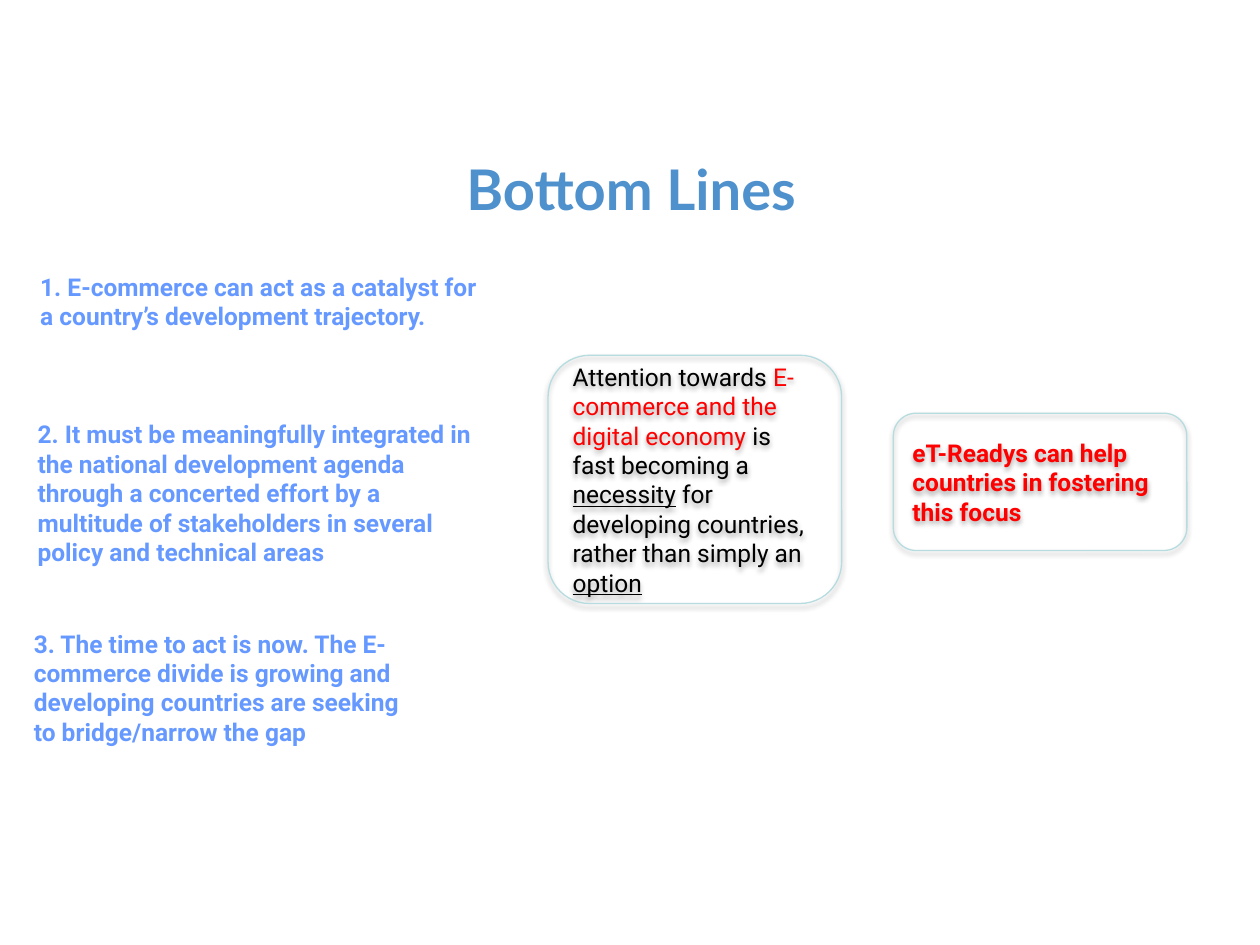
from dataclasses import dataclass

from lxml.etree import SubElement
from pptx import Presentation
from pptx.dml.color import RGBColor
from pptx.enum.shapes import MSO_SHAPE as Shape
from pptx.enum.text import MSO_ANCHOR as Anchor, MSO_AUTO_SIZE as AutoSize, PP_ALIGN as Align
from pptx.oxml.ns import qn
from pptx.util import Inches, Pt


@dataclass(frozen=True)
class Theme:
    title_font: str = "Lato"
    body_font: str = "Roboto"
    title_size: int = 32
    body_size: int = 14
    title: str = "4F91CD"
    point: str = "6699FF"
    text: str = "000000"
    accent: str = "FF0000"
    border: str = "B6DCDF"
    shadow: str = "000000"


@dataclass(frozen=True)
class Area:
    left: float
    top: float
    width: float
    height: float

    def lengths(self) -> tuple[int, int, int, int]:
        w, h = prs.slide_width / 100, prs.slide_height / 100
        return int(self.left * w), int(self.top * h), int(self.width * w), int(self.height * h)


@dataclass(frozen=True)
class Run:
    text: str
    color: str
    bold: bool = False
    underline: bool = False


@dataclass(frozen=True)
class Point:
    area: Area
    text: str


@dataclass(frozen=True)
class Card:
    area: Area
    runs: tuple[Run, ...]


T = Theme()
POINTS = (
    Point(Area(2.2, 28.13, 37.1, 10.8),
          "1. E-commerce can act as a catalyst for a country’s development trajectory."),
    Point(Area(2, 43.73, 36.6, 17.07),
          "2. It must be meaningfully integrated in the national development agenda through "
          "a concerted effort by a multitude of stakeholders in several policy and technical areas"),
    Point(Area(1.7, 65.87, 31.2, 17.07),
          "3. The time to act is now. The E-commerce divide is growing and developing "
          "countries are seeking to bridge/narrow the gap"),
)
CARDS = (
    Card(Area(43.5, 37.6, 23.3, 26.27), (
        Run("Attention towards ", T.text),
        Run("E-commerce and the digital economy ", T.accent),
        Run("is fast becoming a ", T.text),
        Run("necessity", T.text, underline=True),
        Run(" for developing countries, rather than simply an ", T.text),
        Run("option", T.text, underline=True),
    )),
    Card(Area(70.9, 43.73, 23.3, 14.53), (
        Run("eT-Readys can help countries in fostering this focus", T.accent, bold=True),
    )),
)


def add_runs(p, runs: tuple[Run, ...], font: str = T.body_font, size: int = T.body_size) -> None:
    for run in runs:
        r = p.add_run()
        r.text = run.text
        r.font.name, r.font.size = font, Pt(size)
        r.font.bold, r.font.underline = run.bold, run.underline
        r.font.color.rgb = RGBColor.from_string(run.color)


def add_title(s, area: Area, text: str) -> None:
    sp = s.shapes.title
    sp.left, sp.top, sp.width, sp.height = area.lengths()
    tf = sp.text_frame
    tf.vertical_anchor = Anchor.MIDDLE
    tf.margin_left = tf.margin_right = Inches(0.07)
    tf.margin_top = tf.margin_bottom = Inches(0.04)
    p = tf.paragraphs[0]
    p.alignment = Align.CENTER
    add_runs(p, (Run(text, T.title, bold=True),), T.title_font, T.title_size)


def add_point(s, point: Point) -> None:
    tf = s.shapes.add_textbox(*point.area.lengths()).text_frame
    tf.word_wrap = True
    tf.auto_size = AutoSize.SHAPE_TO_FIT_TEXT
    add_runs(tf.paragraphs[0], (Run(point.text, T.point, bold=True),))


def add_shadow(sp) -> None:
    sp.shadow.inherit = False
    effects = sp._element.spPr.find(qn("a:effectLst"))
    outer = SubElement(effects, qn("a:outerShdw"), blurRad=str(Pt(3.1)), dist=str(Pt(1.8)),
                       dir=str(90 * 60000), rotWithShape="0")
    color = SubElement(outer, qn("a:srgbClr"), val=T.shadow)
    SubElement(color, qn("a:alpha"), val="35000")


def add_card(s, card: Card) -> None:
    sp = s.shapes.add_shape(Shape.ROUNDED_RECTANGLE, *card.area.lengths())
    sp.fill.background()
    sp.line.color.rgb = RGBColor.from_string(T.border)
    sp.line.width = Pt(0.75)
    add_shadow(sp)
    tf = sp.text_frame
    tf.word_wrap = True
    tf.vertical_anchor = Anchor.MIDDLE
    p = tf.paragraphs[0]
    p.alignment = Align.LEFT
    add_runs(p, card.runs)


prs = Presentation()
prs.slide_width, prs.slide_height = Inches(10), Inches(7.5)
s = prs.slides.add_slide(prs.slide_layouts[5])
add_title(s, Area(5.1, 13.2, 90, 13.47), "Bottom Lines")
for point in POINTS:
    add_point(s, point)
for card in CARDS:
    add_card(s, card)
prs.save("out.pptx")
